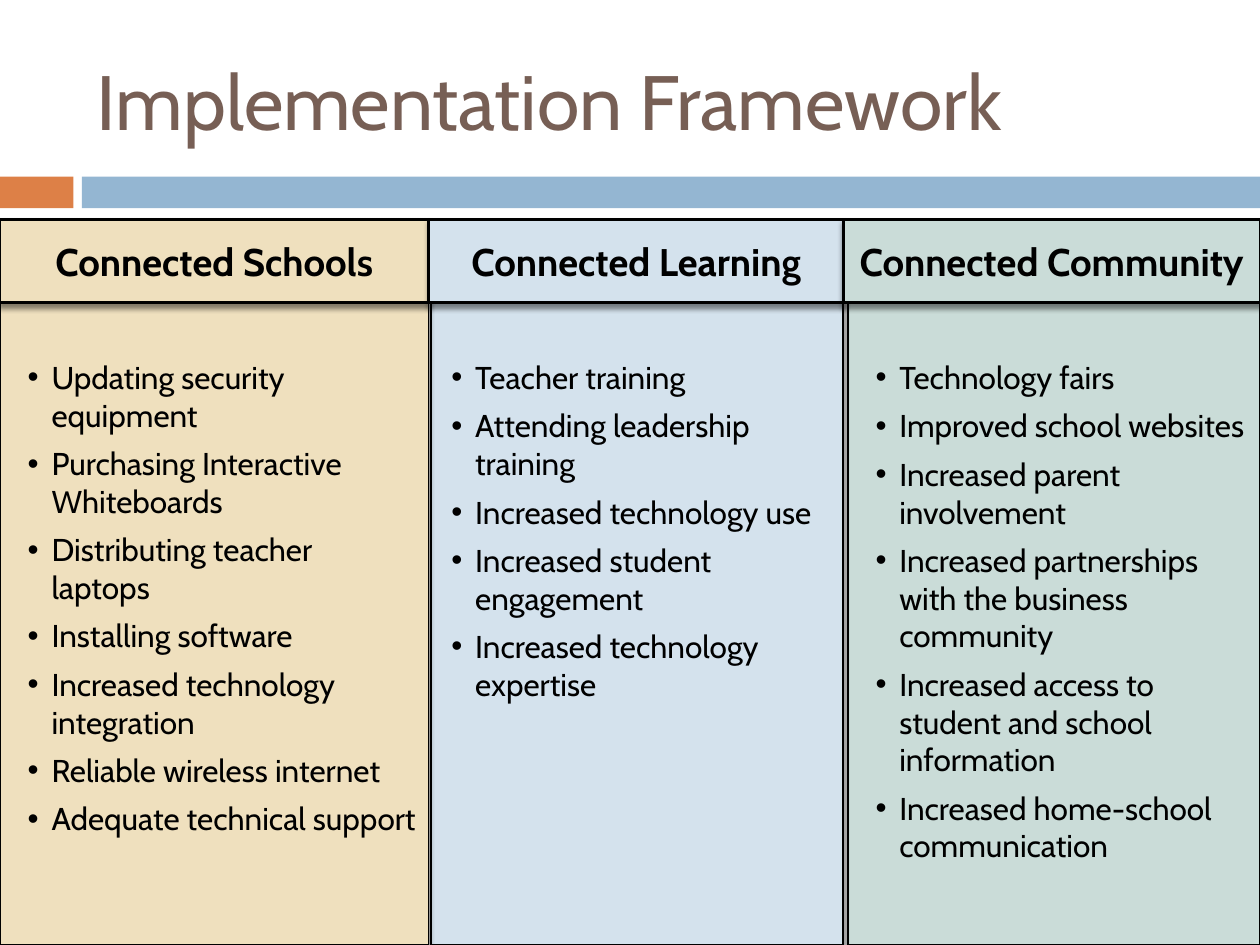
from lxml.etree import SubElement
from pptx import Presentation
from pptx.dml.color import RGBColor
from pptx.enum.shapes import MSO_SHAPE
from pptx.enum.text import MSO_ANCHOR, PP_ALIGN
from pptx.oxml.ns import qn
from pptx.util import Cm, Pt

FONT = "Cabin"
COLORS = {
    "title": "775F55",
    "accent": "DD8047",
    "band": "94B6D2",
    "schools": "EFE0BE",
    "learning": "D4E2ED",
    "community": "CADCD8",
    "black": "000000",
}
HEADER_TOP, HEADER_HEIGHT = 4.42, 1.68
LIST_TOP, LIST_HEIGHT = 6.12, 12.93
HANGING = 0.48

# Positions in centimetres: (left, width) of the header and of the list below it
COLUMNS = [
    {
        "heading": "Connected Schools", "color": "schools",
        "header": (0, 8.64), "list": (0, 8.64), "indent": 0.79,
        "items": [
            "Updating security equipment",
            "Purchasing Interactive Whiteboards",
            "Distributing teacher laptops",
            "Installing software",
            "Increased technology integration",
            "Reliable wireless internet",
            "Adequate technical support",
        ],
    },
    {
        "heading": "Connected Learning", "color": "learning",
        "header": (8.64, 8.37), "list": (8.69, 8.31), "indent": 0.64,
        "items": [
            "Teacher training",
            "Attending leadership training",
            "Increased technology use",
            "Increased student engagement",
            "Increased technology expertise",
        ],
    },
    {
        "heading": "Connected Community", "color": "community",
        "header": (17, 8.4), "list": (17.09, 8.31), "indent": 0.79,
        "items": [
            "Technology fairs",
            "Improved school websites",
            "Increased parent involvement",
            "Increased partnerships with the business community",
            "Increased access to student and school information",
            "Increased home-school communication",
        ],
    },
]


def add_box(left, top, width, height, color, line_width=0):
    """Add a filled rectangle; a line width also gives it an outline and a shadow."""
    shape = slide.shapes.add_shape(
        MSO_SHAPE.RECTANGLE, Cm(left), Cm(top), Cm(width), Cm(height))
    shape.shadow.inherit = False
    shape.fill.solid()
    shape.fill.fore_color.rgb = RGBColor.from_string(COLORS[color])
    if not line_width:
        shape.line.fill.background()
        return shape
    shape.line.color.rgb = RGBColor.from_string(COLORS["black"])
    shape.line.width = Pt(line_width)
    effects = shape._element.spPr.find(qn("a:effectLst"))
    shadow = SubElement(effects, qn("a:outerShdw"), blurRad=str(Pt(3)),
                        dist=str(Pt(2.4)), dir="5400000", rotWithShape="0")
    shadow_color = SubElement(shadow, qn("a:srgbClr"), val=COLORS["black"])
    SubElement(shadow_color, qn("a:alpha"), val="45000")
    shape.text_frame.word_wrap = True
    return shape


def add_text(paragraph, text, size, color="black", bold=False):
    run = paragraph.add_run()
    run.text = text
    run.font.name = FONT
    run.font.size = Pt(size)
    run.font.bold = bold
    run.font.color.rgb = RGBColor.from_string(COLORS[color])


presentation = Presentation()
presentation.slide_width = Cm(25.4)
presentation.slide_height = Cm(19.05)
slide = presentation.slides.add_slide(presentation.slide_layouts[5])

# Title and the band below it
title = slide.shapes.title
title.left, title.top, title.width, title.height = Cm(1.7), Cm(0.64), Cm(22.66), Cm(2.74)
title.text_frame.vertical_anchor = MSO_ANCHOR.MIDDLE
title_paragraph = title.text_frame.paragraphs[0]
title_paragraph.alignment = PP_ALIGN.LEFT
add_text(title_paragraph, "Implementation Framework", 44, "title")

add_box(0, 3.56, 1.48, 0.64, "accent")
add_box(1.65, 3.56, 23.75, 0.64, "band")

# Lists, from right to left
for column in reversed(COLUMNS):
    left, width = column["list"]
    shape = add_box(left, LIST_TOP, width, LIST_HEIGHT, column["color"], 1)
    frame = shape.text_frame
    frame.vertical_anchor = MSO_ANCHOR.TOP
    frame.margin_top = Cm(1.1)
    for index, item in enumerate(column["items"]):
        paragraph = frame.add_paragraph() if index else frame.paragraphs[0]
        paragraph.alignment = PP_ALIGN.LEFT
        paragraph.space_after = Pt(6)
        properties = paragraph._p.get_or_add_pPr()
        properties.set("marL", str(Cm(column["indent"])))
        properties.set("indent", str(-Cm(HANGING)))
        SubElement(properties, qn("a:buFont"), typeface="Arial")
        SubElement(properties, qn("a:buChar"), char="•")
        add_text(paragraph, item, 18)

# Headers, in front so that their shadows fall on the lists
for column in COLUMNS:
    left, width = column["header"]
    shape = add_box(left, HEADER_TOP, width, HEADER_HEIGHT, column["color"], 1.5)
    shape.text_frame.vertical_anchor = MSO_ANCHOR.MIDDLE
    paragraph = shape.text_frame.paragraphs[0]
    paragraph.alignment = PP_ALIGN.CENTER
    add_text(paragraph, column["heading"], 22, bold=True)

presentation.save("out.pptx")
